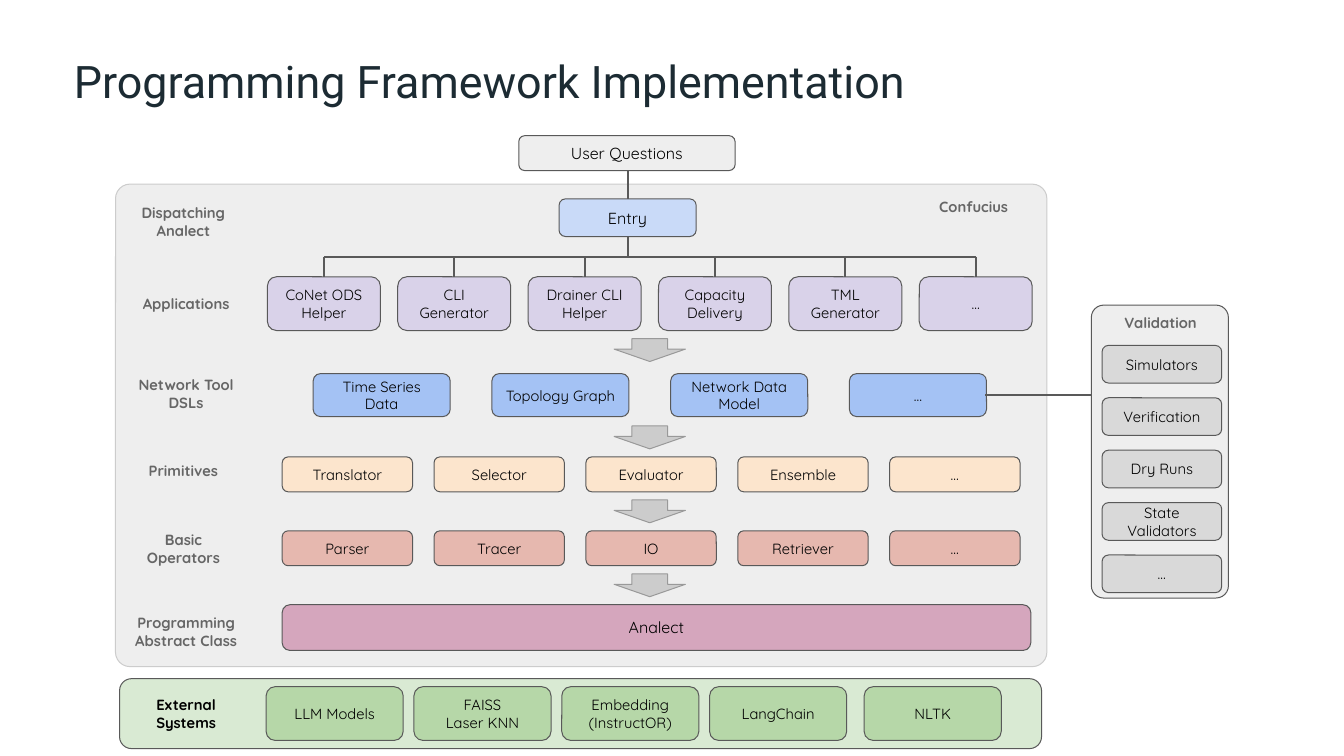
from dataclasses import dataclass

from pptx import Presentation
from pptx.dml.color import RGBColor
from pptx.enum.shapes import MSO_CONNECTOR, MSO_SHAPE
from pptx.enum.text import MSO_ANCHOR, PP_ALIGN
from pptx.oxml import parse_xml
from pptx.oxml.ns import nsdecls
from pptx.util import Inches, Pt

BLACK = RGBColor(0x00, 0x00, 0x00)
NAVY = RGBColor(0x1C, 0x2B, 0x33)
OUTLINE = RGBColor(0x59, 0x59, 0x59)
CAPTION_GRAY = RGBColor(0x66, 0x66, 0x66)
ARROW_EDGE = RGBColor(0x99, 0x99, 0x99)
SILVER = RGBColor(0xCC, 0xCC, 0xCC)
GRAY = RGBColor(0xD9, 0xD9, 0xD9)
PALE_GRAY = RGBColor(0xEE, 0xEE, 0xEE)
PALE_GREEN = RGBColor(0xD9, 0xEA, 0xD3)
GREEN = RGBColor(0xB6, 0xD7, 0xA8)
PINK = RGBColor(0xD5, 0xA6, 0xBD)
PALE_BLUE = RGBColor(0xC9, 0xDA, 0xF8)
BLUE = RGBColor(0xA4, 0xC2, 0xF4)
RED = RGBColor(0xE6, 0xB8, 0xAF)
ORANGE = RGBColor(0xFC, 0xE5, 0xCD)
PURPLE = RGBColor(0xD9, 0xD2, 0xE9)

TRUNK_X = 4.67
BUS_Y = 1.91


@dataclass(frozen=True)
class Area:
    left: float
    top: float
    width: float
    height: float

    def lengths(self) -> list[int]:
        return [Inches(v) for v in (self.left, self.top, self.width, self.height)]


@dataclass(frozen=True)
class Series:
    """Equal boxes that start at `first` and repeat by a fixed step."""
    labels: tuple[str, ...]
    first: Area
    fill: RGBColor
    step_x: float = 0
    step_y: float = 0

    def areas(self) -> list[Area]:
        first = self.first
        return [Area(first.left + i * self.step_x, first.top + i * self.step_y,
                     first.width, first.height) for i in range(len(self.labels))]


@dataclass(frozen=True)
class Caption:
    text: str
    area: Area
    color: RGBColor = CAPTION_GRAY


APPLICATIONS = Series(
    ("CoNet ODS Helper", "CLI Generator", "Drainer CLI Helper",
     "Capacity Delivery", "TML Generator", "…"),
    Area(1.99, 2.06, 0.84, 0.4), PURPLE, step_x=0.97)

SERIES = (
    APPLICATIONS,
    Series(("Time Series Data", "Topology Graph", "Network Data Model", "…"),
           Area(2.33, 2.78, 1.02, 0.32), BLUE, step_x=1.33),
    Series(("Translator", "Selector", "Evaluator", "Ensemble", "…"),
           Area(2.1, 3.4, 0.97, 0.26), ORANGE, step_x=1.13),
    Series(("Parser", "Tracer", "IO", "Retriever", "…"),
           Area(2.1, 3.95, 0.97, 0.26), RED, step_x=1.13),
    Series(("LLM Models", "FAISS\nLaser KNN", "Embedding\n(InstructOR)",
            "LangChain"),
           Area(1.98, 5.11, 1.02, 0.4), GREEN, step_x=1.1),
    Series(("NLTK",), Area(6.43, 5.11, 1.02, 0.4), GREEN),
    Series(("Simulators", "Verification", "Dry Runs", "State Validators", "…"),
           Area(8.2, 2.57, 0.89, 0.28), GRAY, step_y=0.39),
)

CAPTIONS = (
    Caption("Dispatching Analect", Area(0.88, 1.51, 0.97, 0.28)),
    Caption("Applications", Area(0.9, 2.12, 0.97, 0.28)),
    Caption("Network Tool DSLs", Area(0.9, 2.76, 0.97, 0.34)),
    Caption("Primitives", Area(0.88, 3.33, 0.97, 0.34)),
    Caption("Basic Operators", Area(0.88, 3.91, 0.97, 0.34)),
    Caption("Programming Abstract Class", Area(0.86, 4.5, 1.05, 0.4)),
    Caption("External Systems", Area(0.98, 5.14, 0.81, 0.34), BLACK),
    Caption("Validation", Area(8.19, 2.27, 0.89, 0.26)),
    Caption("Confucius", Area(6.76, 1.4, 0.97, 0.28)),
)


def write(shape, text: str, *, size: float = 7.9, color: RGBColor = BLACK,
          bold: bool = False, font: str = "Quicksand", inset: float = 0.07,
          align=PP_ALIGN.CENTER, spacing: float = 1.0) -> None:
    """Fill a shape with text, one paragraph for each line."""
    frame = shape.text_frame
    frame.word_wrap = True
    frame.vertical_anchor = MSO_ANCHOR.MIDDLE
    frame.margin_left = frame.margin_right = Inches(inset)
    frame.margin_top = frame.margin_bottom = Inches(inset)
    frame.text = text
    for para in frame.paragraphs:
        para.alignment = align
        para.line_spacing = spacing
        for span in para.runs:
            span.font.name = font
            span.font.size = Pt(size)
            span.font.bold = bold
            span.font.color.rgb = color


def add_block(slide, area: Area, fill: RGBColor, *, line: RGBColor = OUTLINE,
              kind=MSO_SHAPE.ROUNDED_RECTANGLE,
              adjustments: tuple[float, ...] = (0.17,)):
    block = slide.shapes.add_shape(kind, *area.lengths())
    block.shadow.inherit = False
    for i, value in enumerate(adjustments):
        block.adjustments[i] = value
    block.fill.solid()
    block.fill.fore_color.rgb = fill
    block.line.color.rgb = line
    block.line.width = Pt(0.54)
    return block


def add_line(slide, x1: float, y1: float, x2: float, y2: float) -> None:
    line = slide.shapes.add_connector(
        MSO_CONNECTOR.STRAIGHT, Inches(x1), Inches(y1), Inches(x2), Inches(y2))
    line.line.color.rgb = OUTLINE
    line.line.width = Pt(1.08)
    line._element.spPr.append(parse_xml(f"<a:effectLst {nsdecls('a')}/>"))


def add_tree(slide) -> None:
    """Join the questions to the entry, and the entry to each application."""
    areas = APPLICATIONS.areas()
    centers = [area.left + area.width / 2 for area in areas]
    add_line(slide, TRUNK_X, 1.27, TRUNK_X, 1.48)
    add_line(slide, TRUNK_X, 1.76, TRUNK_X, BUS_Y)
    add_line(slide, centers[0], BUS_Y, centers[-1], BUS_Y)
    for center in centers:
        add_line(slide, center, BUS_Y, center, APPLICATIONS.first.top)


def main() -> None:
    deck = Presentation()
    deck.slide_width = Inches(10)
    deck.slide_height = deck.slide_width * 9 // 16
    slide = deck.slides.add_slide(deck.slide_layouts[6])

    title = slide.shapes.add_textbox(*Area(0.55, 0.34, 8.08, 0.46).lengths())
    write(title, "Programming Framework Implementation", size=24, color=NAVY,
          font="Roboto", inset=0, align=PP_ALIGN.LEFT, spacing=1.15)

    add_block(slide, Area(8.12, 2.27, 1.02, 2.18), PALE_GRAY, adjustments=(0.09,))
    add_block(slide, Area(0.86, 1.37, 6.93, 3.59), PALE_GRAY, line=SILVER,
              adjustments=(0.03,))
    add_block(slide, Area(0.89, 5.05, 6.86, 0.52), PALE_GREEN)

    for text, area, fill in (
        ("User Questions", Area(3.86, 1.01, 1.61, 0.26), PALE_GRAY),
        ("Entry", Area(4.16, 1.48, 1.02, 0.28), PALE_BLUE),
        ("Analect", Area(2.1, 4.5, 5.57, 0.34), PINK),
    ):
        write(add_block(slide, area, fill), text, size=8.6)

    for series in SERIES:
        for label, area in zip(series.labels, series.areas()):
            write(add_block(slide, area, series.fill), label)

    for caption in CAPTIONS:
        box = slide.shapes.add_textbox(*caption.area.lengths())
        write(box, caption.text, color=caption.color, bold=True)

    add_tree(slide)
    for top in (2.52, 3.17, 3.72, 4.27):
        add_block(slide, Area(4.57, top, 0.53, 0.17), SILVER, line=ARROW_EDGE,
                  kind=MSO_SHAPE.DOWN_ARROW, adjustments=(0.5, 0.54))
    add_line(slide, 7.33, 2.94, 8.12, 2.94)

    deck.save("out.pptx")


if __name__ == "__main__":
    main()
